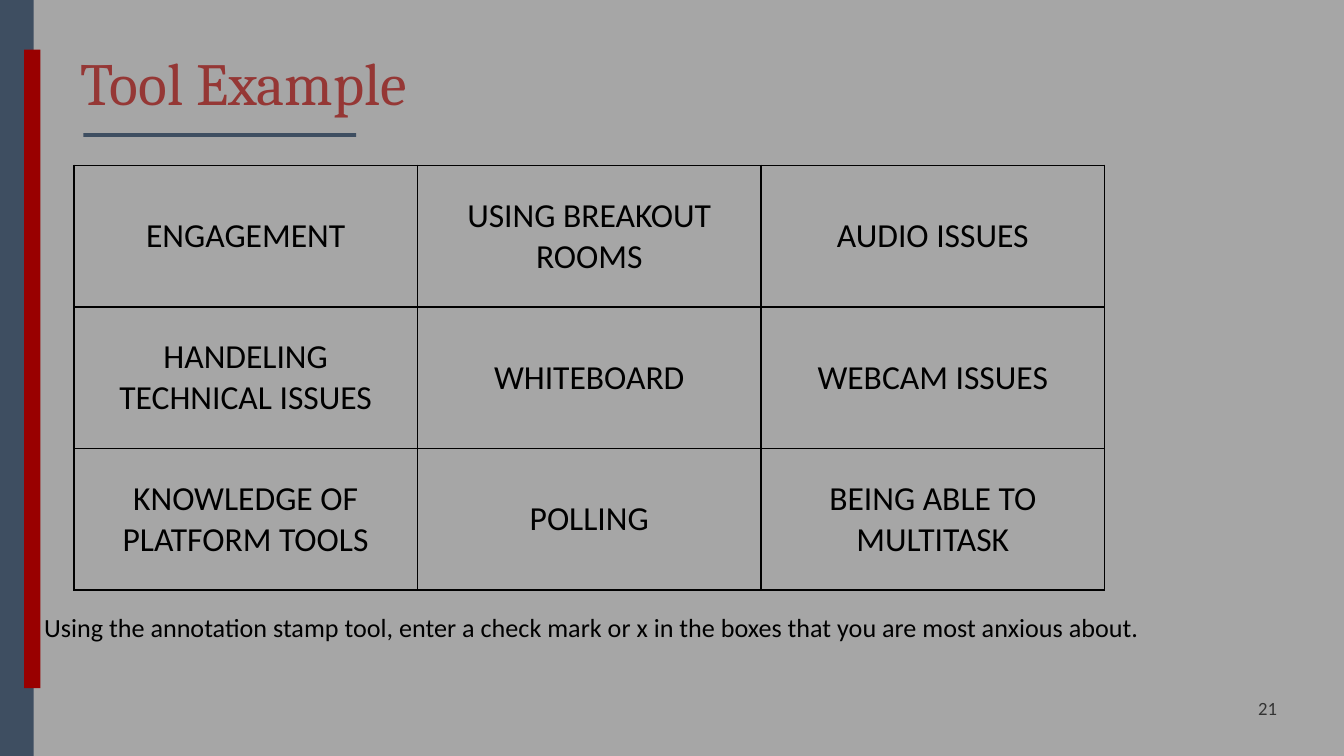
from lxml.etree import SubElement
from pptx import Presentation
from pptx.dml.color import RGBColor
from pptx.enum.shapes import MSO_SHAPE
from pptx.enum.text import MSO_ANCHOR, PP_ALIGN
from pptx.oxml.ns import qn
from pptx.util import Inches, Pt

# Content
TITLE = "Tool Example"
TOPICS = [
    ["ENGAGEMENT", "USING BREAKOUT ROOMS", "AUDIO ISSUES"],
    ["HANDELING TECHNICAL ISSUES", "WHITEBOARD", "WEBCAM ISSUES"],
    ["KNOWLEDGE OF PLATFORM TOOLS", "POLLING", "BEING ABLE TO MULTITASK"],
]
INSTRUCTION = ("Using the annotation stamp tool, enter a check mark or x "
               "in the boxes that you are most anxious about.")
PAGE_NUMBER = "21"

# Colours
GREY = RGBColor(0xA6, 0xA6, 0xA6)
SLATE = RGBColor(0x3E, 0x4E, 0x61)
RED = RGBColor(0x99, 0x00, 0x00)
BRICK = RGBColor(0x95, 0x37, 0x35)
BLACK = RGBColor(0, 0, 0)
CHARCOAL = RGBColor(0x33, 0x33, 0x33)

# Layout: a 16:9 slide; bars as left, top, width, height, colour
SLIDE_WIDTH = 10
SLIDE_HEIGHT = SLIDE_WIDTH * 9 / 16
BARS = [
    (0.62, 0.99, 2.03, 0.03, SLATE),
    (0, 0, 0.25, SLIDE_HEIGHT, SLATE),
    (0.18, 0.37, 0.12, 4.75, RED),
]
TABLE_BOX = (0.55, 1.23, 7.67, 3.16)


def inches(*lengths):
    return [Inches(length) for length in lengths]


def format_text(frame, text, size, color, font="Calibri",
                align=PP_ALIGN.LEFT, anchor=MSO_ANCHOR.MIDDLE):
    frame.text = text
    frame.word_wrap = True
    frame.vertical_anchor = anchor
    paragraph = frame.paragraphs[0]
    paragraph.alignment = align
    paragraph.font.size = Pt(size)
    paragraph.font.name = font
    paragraph.font.color.rgb = color


def add_borders(cell):
    properties = cell._tc.get_or_add_tcPr()
    for position, side in enumerate(("a:lnL", "a:lnR", "a:lnT", "a:lnB")):
        line = properties.makeelement(qn(side), {"w": str(Pt(1))})
        fill = SubElement(line, qn("a:solidFill"))
        SubElement(fill, qn("a:srgbClr"), val=str(BLACK))
        properties.insert(position, line)  # borders come before the fill


presentation = Presentation()
presentation.slide_width = Inches(SLIDE_WIDTH)
presentation.slide_height = Inches(SLIDE_HEIGHT)
slide = presentation.slides.add_slide(presentation.slide_layouts[5])
slide.background.fill.solid()
slide.background.fill.fore_color.rgb = GREY

# Decorative bars
for *box, color in BARS:
    bar = slide.shapes.add_shape(MSO_SHAPE.RECTANGLE, *inches(*box))
    bar.shadow.inherit = False
    bar.fill.solid()
    bar.fill.fore_color.rgb = color
    bar.line.fill.background()

# Title
title = slide.shapes.title
title.left, title.top, title.width, title.height = inches(0.5, 0.23, 9, 0.75)
format_text(title.text_frame, TITLE, 32, BRICK, font="Cambria")

# Topic grid
table = slide.shapes.add_table(
    len(TOPICS), len(TOPICS[0]), *inches(*TABLE_BOX)).table
table.first_row = table.horz_banding = False
for row, topics in enumerate(TOPICS):
    for column, topic in enumerate(topics):
        cell = table.cell(row, column)
        cell.fill.background()
        cell.vertical_anchor = MSO_ANCHOR.MIDDLE
        add_borders(cell)
        cell.text = topic
        paragraph = cell.text_frame.paragraphs[0]
        paragraph.alignment = PP_ALIGN.CENTER
        paragraph.font.size = Pt(18)
        paragraph.font.name = "Calibri"
        paragraph.font.color.rgb = BLACK

# Instruction and page number
instruction = slide.shapes.add_textbox(*inches(0.23, 4.5, 8.85, 0.34))
format_text(instruction.text_frame, INSTRUCTION, 14, BLACK,
            anchor=MSO_ANCHOR.TOP)
number = slide.shapes.add_textbox(*inches(8.82, 5.12, 0.78, 0.3))
format_text(number.text_frame, PAGE_NUMBER, 10, CHARCOAL,
            align=PP_ALIGN.RIGHT)

presentation.save("out.pptx")
